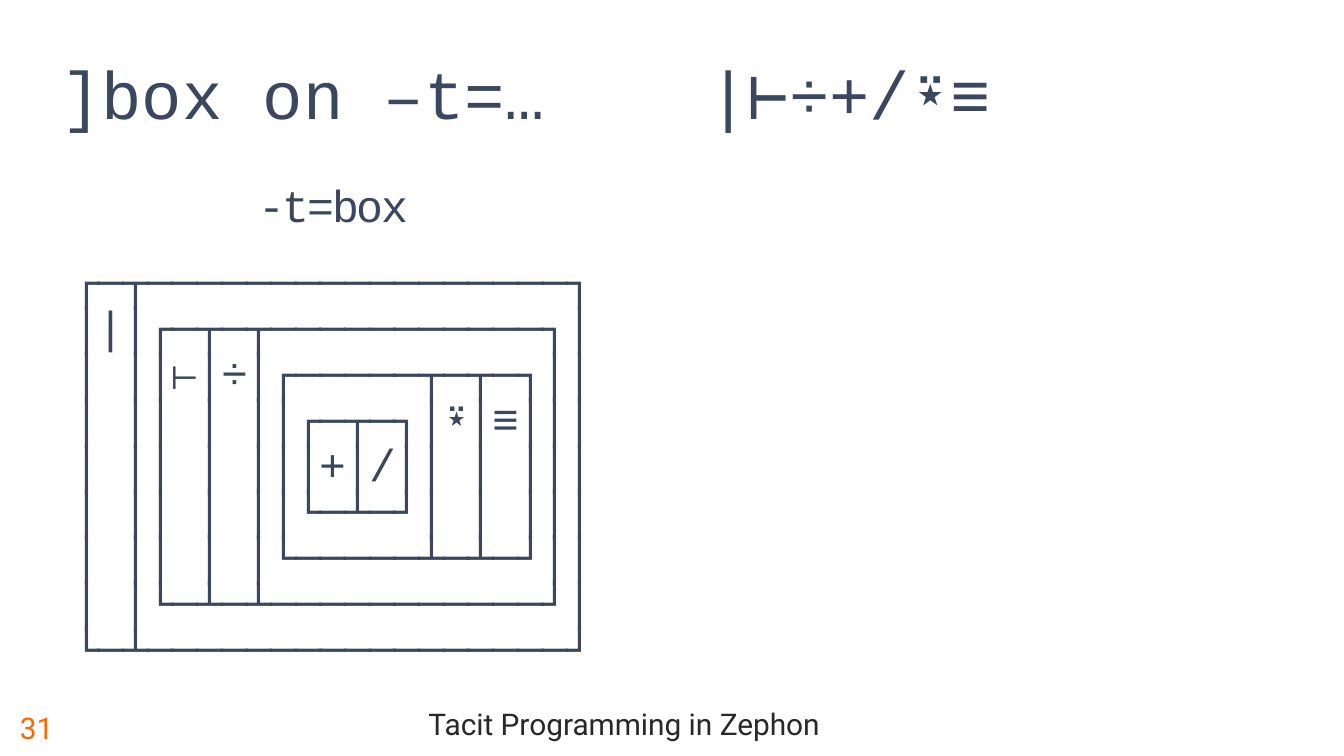
from lxml import etree
from pptx import Presentation
from pptx.dml.color import RGBColor
from pptx.enum.text import MSO_ANCHOR, MSO_AUTO_SIZE, PP_ALIGN
from pptx.oxml.ns import qn
from pptx.util import Pt

PX = 4572
LEFT, CENTER = PP_ALIGN.LEFT, PP_ALIGN.CENTER
MIDDLE, BOTTOM = MSO_ANCHOR.MIDDLE, MSO_ANCHOR.BOTTOM
NO_AUTOFIT = MSO_AUTO_SIZE.NONE
NO_GRID_STYLE = "{2D5ABB26-0587-4C30-8999-92F81FD0307C}"
MONO, SANS = "Courier New", "Roboto"
NAVY, DARK, ORANGE = "3B475E", "282828", "FF6600"

BOX_TREE = """\
┌─┬─────────────────┐
│|│┌─┬─┬───────────┐│
│ ││⊢│÷│┌─────┬─┬─┐││
│ ││ │ ││┌─┬─┐│⍣│≡│││
│ ││ │ │││+│/││ │ │││
│ ││ │ ││└─┴─┘│ │ │││
│ ││ │ │└─────┴─┴─┘││
│ │└─┴─┴───────────┘│
└─┴─────────────────┘"""


def px(n):
    return n * PX


def color(value):
    return RGBColor.from_string(value)


def write(tf, text, font=MONO, size=24, fill=NAVY, align=LEFT,
          line=None, spacing=None, tab=None):
    for i, content in enumerate(text.split("\n")):
        p = tf.paragraphs[0] if i == 0 else tf.add_paragraph()
        p.alignment = align
        if line:
            p.line_spacing = line
        if tab:
            tabs = etree.SubElement(p._p.get_or_add_pPr(), qn("a:tabLst"))
            etree.SubElement(tabs, qn("a:tab"), pos=str(px(tab)), algn="r")
        r = p.add_run()
        r.text = content
        r.font.name = font
        r.font.size = Pt(size)
        r.font.color.rgb = color(fill)
        rPr = r.font._element
        for tag in ("a:ea", "a:cs"):
            etree.SubElement(rPr, qn(tag), typeface=font)
        if spacing:
            rPr.set("spc", str(spacing))


def add_title(s, text, x, y, w, h, **fmt):
    sp = s.shapes.title
    sp.left, sp.top, sp.width, sp.height = map(px, (x, y, w, h))
    tf = sp.text_frame
    tf.auto_size = NO_AUTOFIT
    tf.vertical_anchor = BOTTOM
    write(tf, text, **fmt)


def add_label(s, text, x, y, w, h, **fmt):
    tf = s.shapes.add_textbox(*map(px, (x, y, w, h))).text_frame
    tf.word_wrap = True
    tf.vertical_anchor = MIDDLE
    write(tf, text, **fmt)


def add_plain_table(s, rows, x, y, widths, heights, **fmt):
    frame = s.shapes.add_table(len(heights), len(widths), px(x), px(y),
                               px(sum(widths)), px(sum(heights)))
    table = frame.table
    table.first_row = table.horz_banding = False
    table._tbl.tblPr.find(qn("a:tableStyleId")).text = NO_GRID_STYLE
    for col, w in zip(table.columns, widths):
        col.width = px(w)
    for row, h in zip(table.rows, heights):
        row.height = px(h)
    for cell in table.iter_cells():
        cell.fill.background()
        cell.margin_left = cell.margin_right = 0
        cell.margin_top = cell.margin_bottom = 0
    for i, row in enumerate(rows):
        for j, text in enumerate(row):
            write(table.cell(i, j).text_frame, text, **fmt)


def main():
    prs = Presentation()
    prs.slide_width, prs.slide_height = px(2000), px(1125)
    s = prs.slides.add_slide(prs.slide_layouts[5])
    add_label(s, "Tacit Programming in Zephon", 156, 1038, 1546, 88,
              font=SANS, size=16, fill=DARK, align=CENTER, line=0.8)
    add_label(s, "31", 10, 1038, 146, 88, font=SANS, size=16, fill=ORANGE)
    add_plain_table(s, [["-t=box"], [BOX_TREE]], 71, 277,
                    [850, 480, 534], [112, 580],
                    align=CENTER, line=0.9, spacing=-120)
    add_title(s, "]box on –t=…\t|⊢÷+/⍣≡", 71, 58, 1424, 150,
              size=36, tab=1490)
    prs.save("out.pptx")


if __name__ == "__main__":
    main()
